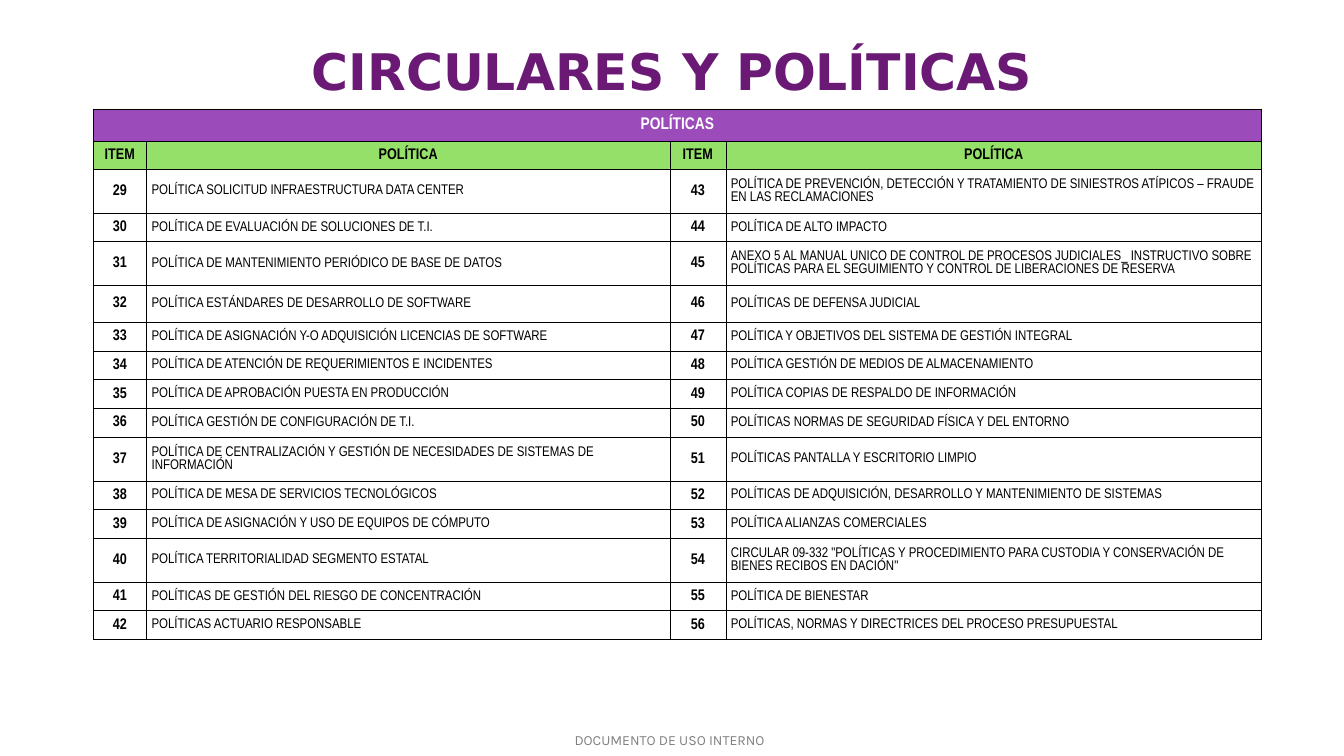
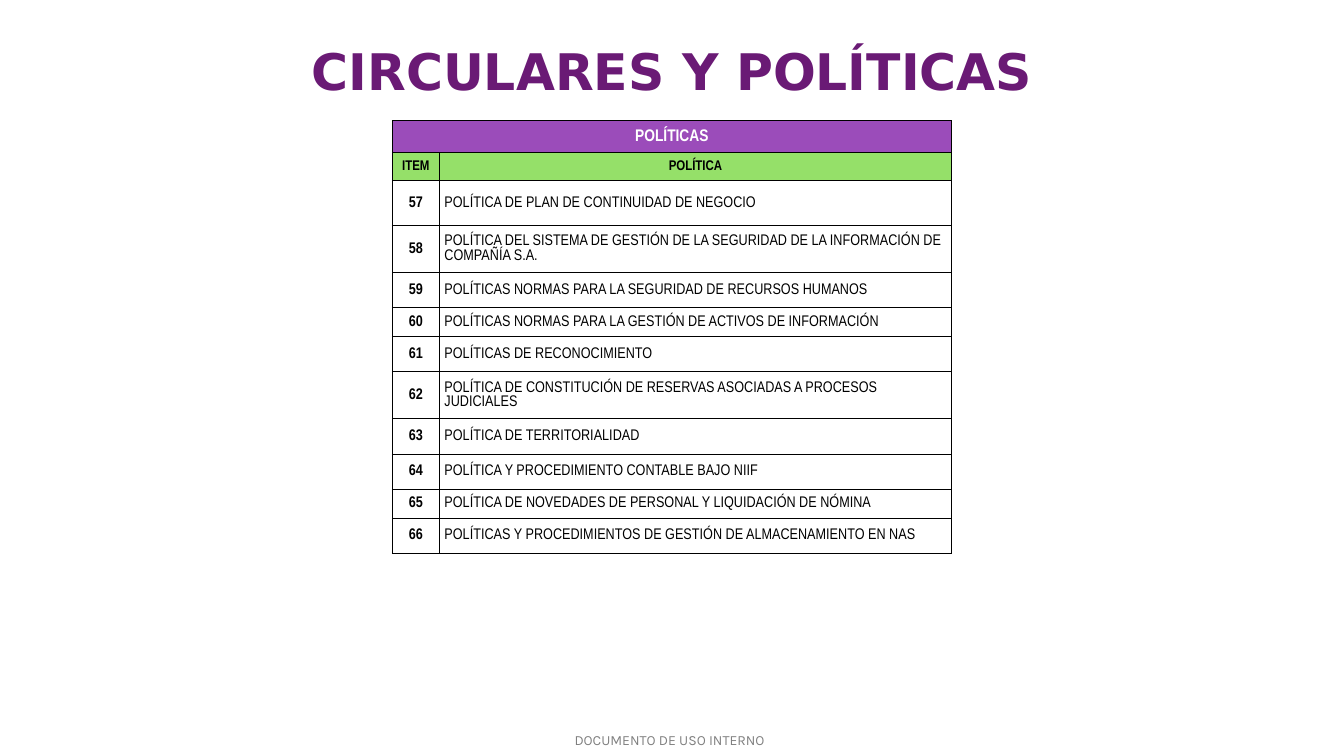
"""Build two slides that list numbered company policies in tables."""
from lxml import etree
from pptx import Presentation
from pptx.dml.color import RGBColor
from pptx.enum import text
from pptx.oxml import ns
from pptx.util import Pt

PURPLE, VIOLET, GREEN, BLACK, WHITE = "6A1A75", "9B4CBA", "95E069", "000000", "FFFFFF"
TITLE_FONT, TABLE_FONT, FOOTER_FONT = "DejaVu Sans", "Arial Narrow", "Karla"
BANNER, HEADER, SINGLE, MEDIUM, DOUBLE = 22.9, 20.1, 20.5, 25.2, 31.3


def style(paragraph, font_name, size, color, bold=False, align=text.PP_ALIGN.LEFT):
    paragraph.alignment = align
    for run in paragraph.runs:
        run.font.name, run.font.size, run.font.bold = font_name, Pt(size), bold
        run.font.color.rgb = RGBColor.from_string(color)


def fill_cell(cell, value, size, color=BLACK, bold=True, centered=True, fill=None):
    cell.text_frame.text = value
    align = text.PP_ALIGN.CENTER if centered else text.PP_ALIGN.LEFT
    style(cell.text_frame.paragraphs[0], TABLE_FONT, size, color, bold, align)
    cell.vertical_anchor = text.MSO_ANCHOR.MIDDLE
    margin = 0.72 if fill else 3.6
    cell.margin_left = cell.margin_right = cell.margin_top = Pt(margin)
    cell.margin_bottom = Pt(0 if fill else margin)
    properties = cell._tc.get_or_add_tcPr()
    for side in ("lnL", "lnR", "lnT", "lnB"):
        line = etree.SubElement(properties, ns.qn(f"a:{side}"), w=str(Pt(0.5)))
        solid = etree.SubElement(line, ns.qn("a:solidFill"))
        etree.SubElement(solid, ns.qn("a:srgbClr"), val=BLACK)
    if fill:
        cell.fill.solid()
        cell.fill.fore_color.rgb = RGBColor.from_string(fill)
    else:
        cell.fill.background()


POLICIES_29_TO_56 = [
    "POLÍTICA SOLICITUD INFRAESTRUCTURA DATA CENTER",
    "POLÍTICA DE EVALUACIÓN DE SOLUCIONES DE T.I.",
    "POLÍTICA DE MANTENIMIENTO PERIÓDICO DE BASE DE DATOS",
    "POLÍTICA ESTÁNDARES DE DESARROLLO DE SOFTWARE",
    "POLÍTICA DE ASIGNACIÓN Y-O ADQUISICIÓN LICENCIAS DE SOFTWARE",
    "POLÍTICA DE ATENCIÓN DE REQUERIMIENTOS E INCIDENTES",
    "POLÍTICA DE APROBACIÓN PUESTA EN PRODUCCIÓN",
    "POLÍTICA GESTIÓN DE CONFIGURACIÓN DE T.I.",
    "POLÍTICA DE CENTRALIZACIÓN Y GESTIÓN DE NECESIDADES DE SISTEMAS DE INFORMACIÓN",
    "POLÍTICA DE MESA DE SERVICIOS TECNOLÓGICOS",
    "POLÍTICA DE ASIGNACIÓN Y USO DE EQUIPOS DE CÓMPUTO",
    "POLÍTICA TERRITORIALIDAD SEGMENTO ESTATAL",
    "POLÍTICAS DE GESTIÓN DEL RIESGO DE CONCENTRACIÓN",
    "POLÍTICAS ACTUARIO RESPONSABLE",
    "POLÍTICA DE PREVENCIÓN, DETECCIÓN Y TRATAMIENTO DE SINIESTROS ATÍPICOS – FRAUDE EN LAS RECLAMACIONES",
    "POLÍTICA DE ALTO IMPACTO",
    "ANEXO 5 AL MANUAL UNICO DE CONTROL DE PROCESOS JUDICIALES_ INSTRUCTIVO SOBRE "
    "POLÍTICAS PARA EL SEGUIMIENTO Y CONTROL DE LIBERACIONES DE RESERVA",
    "POLÍTICAS DE DEFENSA JUDICIAL",
    "POLÍTICA Y OBJETIVOS DEL SISTEMA DE GESTIÓN INTEGRAL",
    "POLÍTICA GESTIÓN DE MEDIOS DE ALMACENAMIENTO",
    "POLÍTICA COPIAS DE RESPALDO DE INFORMACIÓN",
    "POLÍTICAS NORMAS DE SEGURIDAD FÍSICA Y DEL ENTORNO",
    "POLÍTICAS PANTALLA Y ESCRITORIO LIMPIO",
    "POLÍTICAS DE ADQUISICIÓN, DESARROLLO Y MANTENIMIENTO DE SISTEMAS",
    "POLÍTICA ALIANZAS COMERCIALES",
    'CIRCULAR 09-332 "POLÍTICAS Y PROCEDIMIENTO PARA CUSTODIA Y CONSERVACIÓN DE BIENES RECIBOS EN DACIÓN"',
    "POLÍTICA DE BIENESTAR",
    "POLÍTICAS, NORMAS Y DIRECTRICES DEL PROCESO PRESUPUESTAL",
]
POLICIES_57_TO_66 = [
    "POLÍTICA DE PLAN DE CONTINUIDAD DE NEGOCIO",
    "POLÍTICA DEL SISTEMA DE GESTIÓN DE LA SEGURIDAD DE LA INFORMACIÓN DE COMPAÑÍA S.A.",
    "POLÍTICAS NORMAS PARA LA SEGURIDAD DE RECURSOS HUMANOS",
    "POLÍTICAS NORMAS PARA LA GESTIÓN DE ACTIVOS DE INFORMACIÓN",
    "POLÍTICAS DE RECONOCIMIENTO",
    "POLÍTICA DE CONSTITUCIÓN DE RESERVAS ASOCIADAS A PROCESOS JUDICIALES",
    "POLÍTICA DE TERRITORIALIDAD",
    "POLÍTICA Y PROCEDIMIENTO CONTABLE BAJO NIIF",
    "POLÍTICA DE NOVEDADES DE PERSONAL Y LIQUIDACIÓN DE NÓMINA",
    "POLÍTICAS Y PROCEDIMIENTOS DE GESTIÓN DE ALMACENAMIENTO EN NAS",
]
TABLES = [
    dict(first=29, policies=POLICIES_29_TO_56, left=66.5, top=77.9,
         widths=[38.2, 373.8, 40, 382.7], header_size=11, policy_size=10,
         heights=[DOUBLE, SINGLE, DOUBLE, 26.3] + [SINGLE] * 4
         + [DOUBLE, SINGLE, SINGLE, DOUBLE, SINGLE, SINGLE]),
    dict(first=57, policies=POLICIES_57_TO_66, left=280.2, top=86,
         widths=[33.7, 365.8], header_size=10, policy_size=11,
         heights=[32.1, 33.6, MEDIUM, SINGLE, MEDIUM, 33.6, MEDIUM, MEDIUM, SINGLE, MEDIUM]),
]

presentation = Presentation()
presentation.slide_width, presentation.slide_height = Pt(960), Pt(540)
layout = presentation.slide_layouts[5]

for content in TABLES:
    slide = presentation.slides.add_slide(layout)
    title = slide.shapes.title
    title.left, title.top, title.width, title.height = Pt(88.5), Pt(23), Pt(783), Pt(55)
    frame = title.text_frame
    frame.text = "CIRCULARES Y POLÍTICAS"
    frame.auto_size = text.MSO_AUTO_SIZE.NONE
    frame.vertical_anchor = text.MSO_ANCHOR.MIDDLE
    frame.margin_left = frame.margin_right = frame.margin_top = frame.margin_bottom = Pt(5.76)
    style(frame.paragraphs[0], TITLE_FONT, 36, PURPLE, True, text.PP_ALIGN.CENTER)

    widths, heights = content["widths"], [BANNER, HEADER] + content["heights"]
    table = slide.shapes.add_table(
        len(heights), len(widths), Pt(content["left"]), Pt(content["top"]),
        Pt(sum(widths)), Pt(sum(heights))).table
    table.first_row = table.horz_banding = False
    for column, width in zip(table.columns, widths):
        column.width = Pt(width)
    for row, height in zip(table.rows, heights):
        row.height = Pt(height)

    for column in range(len(widths)):
        fill_cell(table.cell(0, column), "" if column else "POLÍTICAS", 12, WHITE, fill=VIOLET)
        fill_cell(table.cell(1, column), "POLÍTICA" if column % 2 else "ITEM",
                  content["header_size"], fill=GREEN)
    table.cell(0, 0).merge(table.cell(0, len(widths) - 1))

    for index, policy in enumerate(content["policies"]):
        block, row = divmod(index, len(content["heights"]))
        fill_cell(table.cell(row + 2, block * 2), str(content["first"] + index), 11)
        fill_cell(table.cell(row + 2, block * 2 + 1), policy, content["policy_size"],
                  bold=False, centered=False)

footer = slide.shapes.add_textbox(Pt(410.4), Pt(522.7), Pt(140.4), Pt(12.2))
frame = footer.text_frame
frame.text = "DOCUMENTO DE USO INTERNO"
frame.word_wrap = False
frame.margin_left = frame.margin_right = frame.margin_top = frame.margin_bottom = 0
style(frame.paragraphs[0], FOOTER_FONT, 10, BLACK)
for color in footer.element.iter(ns.qn("a:srgbClr")):
    etree.SubElement(color, ns.qn("a:alpha"), val="50000")
layout.shapes.element.append(footer.element)

presentation.save("out.pptx")
